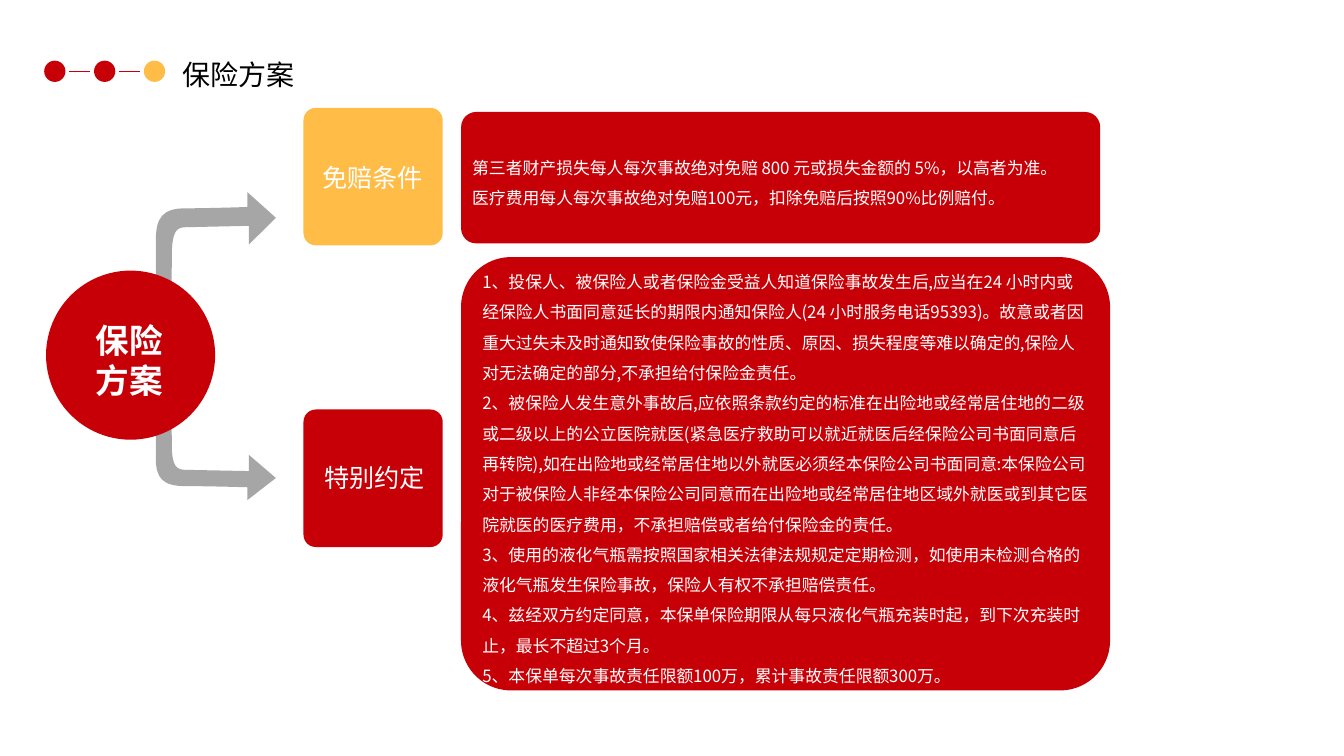
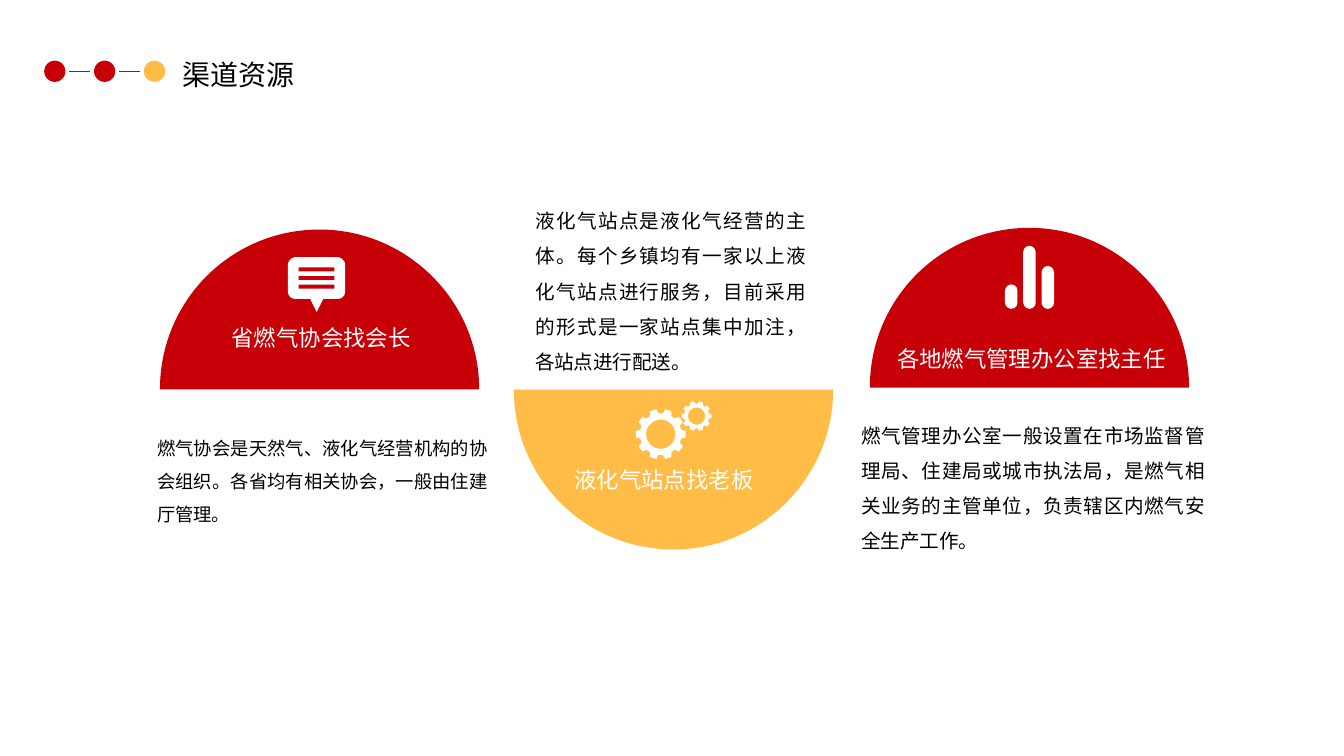
from collections import namedtuple
from math import cos, pi, sin

from lxml import etree
from pptx import Presentation
from pptx.dml.color import RGBColor
from pptx.enum.shapes import MSO_CONNECTOR, MSO_SHAPE
from pptx.enum.text import MSO_ANCHOR, MSO_AUTO_SIZE, PP_ALIGN
from pptx.oxml.ns import qn
from pptx.util import Pt

LEFT, CENTER, JUSTIFY = PP_ALIGN.LEFT, PP_ALIGN.CENTER, PP_ALIGN.JUSTIFY
TOP, MIDDLE = MSO_ANCHOR.TOP, MSO_ANCHOR.MIDDLE
FIXED, GROW = MSO_AUTO_SIZE.NONE, MSO_AUTO_SIZE.SHAPE_TO_FIT_TEXT
ELLIPSE, ROUNDED = MSO_SHAPE.OVAL, MSO_SHAPE.ROUNDED_RECTANGLE
STRAIGHT = MSO_CONNECTOR.STRAIGHT

RED, AMBER, GRAY, WHITE, BLACK = "C70008", "FFBD47", "A6A6A6", "FFFFFF", "000000"
FONT = "Noto Sans CJK SC"
Box = namedtuple("Box", "left top width height")

# Outlines: a pair is a line end, six numbers are a Bezier curve
BENT_ARROW = [[(11, 127), (12, 42), (13, 26, 17, 26, 25, 26), (69, 25), (69, 39),
               (89, 19), (68, 0), (68, 11), (68, 11, 39, 12, 22, 12),
               (5, 12, 0, 19, 0, 36), (0, 129), (2, 144, 9, 143, 11, 127)]]
HALF_DISC = [[(119, 0), (184, 0, 238, 53, 238, 119), (0, 119),
              (0, 53, 53, 0, 119, 0)]]
BUBBLE = [[(5, 0), (38, 0), (40, 0, 43, 3, 43, 5), (43, 26),
           (43, 29, 40, 31, 38, 31), (5, 31), (3, 31, 0, 29, 0, 26),
           (0, 5), (0, 3, 3, 0, 5, 0)]]
BUBBLE += [[(8, y), (8, y + 3), (35, y + 3), (35, y)] for y in (7.5, 14, 20.5)]
BUBBLE_TAIL = [[(0, 0), (11, 0), (5.5, 11)]]

EXEMPTIONS = [
    "第三者财产损失每人每次事故绝对免赔 800 元或损失金额的 5%，以高者为准。",
    "医疗费用每人每次事故绝对免赔100元，扣除免赔后按照90%比例赔付。",
]
AGREEMENTS = [
    "1、投保人、被保险人或者保险金受益人知道保险事故发生后,应当在24 小时内或经保险人书面"
    "同意延长的期限内通知保险人(24 小时服务电话95393)。故意或者因重大过失未及时通知致使"
    "保险事故的性质、原因、损失程度等难以确定的,保险人对无法确定的部分,不承担给付保险金责任。",
    "2、被保险人发生意外事故后,应依照条款约定的标准在出险地或经常居住地的二级或二级以上的"
    "公立医院就医(紧急医疗救助可以就近就医后经保险公司书面同意后再转院),如在出险地或经常"
    "居住地以外就医必须经本保险公司书面同意:本保险公司对于被保险人非经本保险公司同意而在"
    "出险地或经常居住地区域外就医或到其它医院就医的医疗费用，不承担赔偿或者给付保险金的责任。",
    "3、使用的液化气瓶需按照国家相关法律法规规定定期检测，如使用未检测合格的液化气瓶发生"
    "保险事故，保险人有权不承担赔偿责任。",
    "4、兹经双方约定同意，本保单保险期限从每只液化气瓶充装时起，到下次充装时止，"
    "最长不超过3个月。",
    "5、本保单每次事故责任限额100万，累计事故责任限额300万。",
]
ASSOCIATION = "燃气协会是天然气、液化气经营机构的协会组织。各省均有相关协会，一般由住建厅管理。"
STATION = ("液化气站点是液化气经营的主体。每个乡镇均有一家以上液化气站点进行服务，"
           "目前采用的形式是一家站点集中加注，各站点进行配送。")
OFFICE = ("燃气管理办公室一般设置在市场监督管理局、住建局或城市执法局，是燃气相关业务的"
          "主管单位，负责辖区内燃气安全生产工作。")


# Shared helpers
def color(hex_value):
    return RGBColor.from_string(hex_value)


def lengths(box):
    return [Pt(value) for value in box]


def inside(box, part):
    """Turn offsets from a box into a place on the page."""
    return part._replace(left=box.left + part.left, top=box.top + part.top)


def paint(shape, fill):
    shape.shadow.inherit = False
    shape.fill.solid()
    shape.fill.fore_color.rgb = color(fill)
    shape.line.fill.background()
    return shape


def add_preset(page, kind, box, fill, corner=None):
    shape = paint(page.shapes.add_shape(kind, *lengths(box)), fill)
    if corner is not None:
        shape.adjustments[0] = corner
    return shape


def write(shape, lines, size, hex_value, align=LEFT, bold=False, spacing=1.0, **frame_format):
    frame = shape.text_frame
    settings = {"word_wrap": True, "auto_size": FIXED, "vertical_anchor": TOP}
    for name, value in {**settings, **frame_format}.items():
        setattr(frame, name, value)
    for index, line in enumerate(lines):
        para = frame.add_paragraph() if index else frame.paragraphs[0]
        para.alignment, para.line_spacing = align, spacing
        span = para.add_run()
        span.text = line
        for name, value in {"size": Pt(size), "bold": bold, "name": FONT}.items():
            setattr(span.font, name, value)
        span.font.color.rgb = color(hex_value)
        latin = span.font._element.find(qn("a:latin"))
        latin.addnext(etree.Element(qn("a:ea"), typeface=FONT))


def add_text(page, box, lines, size, hex_value, **text_format):
    write(page.shapes.add_textbox(*lengths(box)), lines, size, hex_value, **text_format)


def bend(shape, contours):
    """Join the three line ends that stand for each curve into one Bezier."""
    ends = iter(shape._element.findall(".//" + qn("a:lnTo")))
    for contour in contours:
        for part in contour[1:]:
            first = next(ends)
            if len(part) == 2:
                continue
            curve = etree.Element(qn("a:cubicBezTo"))
            first.addprevious(curve)
            for end in (first, next(ends), next(ends)):
                curve.append(end[0])
                end.getparent().remove(end)


def add_outline(page, box, contours, grid, fill, flip=False):
    """Stretch contours drawn on a grid of the given size over the box."""
    def place(x, y):
        x, y = x / grid[0], y / grid[1]
        return (Pt(box.left + x * box.width),
                Pt(box.top + (1 - y if flip else y) * box.height))

    builder = None
    for contour in contours:
        start, *rest = [place(*part[i:i + 2]) for part in contour
                        for i in range(0, len(part), 2)]
        if builder is None:
            builder = page.shapes.build_freeform(*start, scale=1.0)
        else:
            builder.move_to(*start)
        # A closing line is left to the close mark, so ends match the parts
        builder.add_line_segments(rest, close=False)
    shape = paint(builder.convert_to_shape(), fill)
    bend(shape, contours)
    outline = shape._element.find(".//" + qn("a:path"))
    for move in outline.findall(qn("a:moveTo"))[1:]:
        move.addprevious(etree.Element(qn("a:close")))
    etree.SubElement(outline, qn("a:close"))


def add_header(page, title):
    marker = Box(23.7, 32.5, 11.4, 11.4)
    step, gap = 26.7, 1.9
    for index, fill in enumerate((RED, RED, AMBER)):
        left = marker.left + index * step
        add_preset(page, ELLIPSE, marker._replace(left=left), fill)
        if index:
            middle = Pt(marker.top + marker.height / 2)
            dash = page.shapes.add_connector(
                STRAIGHT, Pt(left - step + marker.width + gap), middle, Pt(left - gap), middle)
            dash.line.color.rgb = color(RED)
            dash.line.width = Pt(0.5)
            etree.SubElement(dash._element.spPr, qn("a:effectLst"))
    heading = page.shapes.title
    heading.left, heading.top, heading.width, heading.height = lengths(
        Box(90.7, 27.4, 130.3, 25.2))
    write(heading, [title], 15, BLACK, auto_size=GROW)


# Insurance plan
def add_hub(page, box):
    add_preset(page, ELLIPSE, box, RED)
    add_text(page, inside(box, Box(5, 22.7, 79.2, 56.2)), ["保险", "方案"], 18, WHITE,
             align=CENTER, bold=True)


def add_tile(page, box, fill, label, label_box):
    add_preset(page, ROUNDED, box, fill, 0.09)
    add_text(page, inside(box, label_box), [label], 13.5, WHITE,
             align=CENTER, vertical_anchor=MIDDLE)


def add_panel(page, box, lines):
    panel = add_preset(page, ROUNDED, box, RED, 0.115)
    write(panel, lines, 9, WHITE, spacing=1.5, vertical_anchor=MIDDLE,
          margin_left=Pt(3.6), margin_right=Pt(3.6), margin_top=Pt(2), margin_bottom=Pt(2))


def build_plan(page):
    add_header(page, "保险方案")
    add_outline(page, Box(83.5, 178.6, 64.3, 89.3), BENT_ARROW, (89, 144), GRAY, flip=True)
    add_outline(page, Box(83.5, 103, 64.3, 103.7), BENT_ARROW, (89, 144), GRAY)
    add_panel(page, Box(247, 60, 342.4, 70.4), EXEMPTIONS)
    add_panel(page, Box(247, 137.8, 347.7, 232.1), AGREEMENTS)
    add_hub(page, Box(24.7, 145, 90.6, 90.6))
    add_tile(page, Box(162.6, 57.8, 74.6, 73.7), AMBER,
             "免赔条件", Box(0, 30.1, 74.2, 14.4))
    add_tile(page, Box(162.6, 219.4, 74.6, 73.7), RED,
             "特别约定", Box(1.6, 29.6, 72.9, 13.7))


# Channel icons, each placed from the top left corner of its half disc
def add_bubble(page, disc):
    box = inside(disc, Box(68.6, 14.8, 30.6, 22.3))
    add_outline(page, inside(box, Box(11.4, 21.4, 7.9, 7.9)), BUBBLE_TAIL, (11, 11), WHITE)
    add_outline(page, box, BUBBLE, (43, 31), WHITE)


def gear_contours(teeth=10):
    """Gear of radius 1 around (1, 1), with a round hole."""
    tooth = ((0.83, -12), (1, -7.5), (1, 7.5), (0.83, 12))
    rim = []
    for index in range(teeth):
        for radius, offset in tooth:
            angle = (index * 360 / teeth + offset) * pi / 180
            rim.append((1 + radius * cos(angle), 1 + radius * sin(angle)))
    near, far, pull = 0.42, 1.58, 0.32
    hole = [(1, near),
            (1 - pull, near, near, 1 - pull, near, 1),
            (near, 1 + pull, 1 - pull, far, 1, far),
            (1 + pull, far, far, 1 + pull, far, 1),
            (far, 1 - pull, 1 + pull, near, 1, near)]
    return [rim, hole]


def add_gears(page, disc):
    for x, y, size in ((65.2, 10.3, 27), (89.9, 6.1, 16)):
        add_outline(page, inside(disc, Box(x, y, size, size)), gear_contours(), (2, 2), WHITE)


def add_bars(page, disc):
    width, step, base = 6.7, 9.8, 43.4
    for index, height in enumerate((13.1, 33.8, 23)):
        box = Box(72.4 + index * step, base - height, width, height)
        add_preset(page, ROUNDED, inside(disc, box), WHITE, 0.5)


def add_channel(page, box, fill, add_icon, label, label_box, note, note_box, size,
                flip=False, align=CENTER):
    """Half disc with icon and label; inner boxes are offsets from the disc."""
    add_outline(page, box, HALF_DISC, (238, 119), fill, flip)
    add_icon(page, box)
    add_text(page, inside(box, label_box), [label], 12, WHITE, align=align, auto_size=GROW)
    add_text(page, inside(box, note_box), [note], size, BLACK, align=JUSTIFY,
             spacing=1.5, auto_size=GROW)


def build_channels(page):
    add_header(page, "渠道资源")
    width, height = 171, 85.6
    add_channel(page, Box(85.7, 123, width, height), RED, add_bubble,
                "省燃气协会找会长", Box(-10.8, 46.9, 194.4, 21.6),
                ASSOCIATION, Box(-8.5, 102, 191, 60.5), 9.75)
    add_channel(page, Box(275.3, 208.8, width, height), AMBER, add_gears,
                "液化气站点找老板", Box(20.7, 37.4, 119.5, 21.6),
                STATION, Box(4.3, -106.6, 159.6, 103), 10.5, flip=True)
    add_channel(page, Box(466, 122.1, width, height), RED, add_bars,
                "各地燃气管理办公室找主任", Box(7.5, 59.3, 164.2, 21.6),
                OFFICE, Box(-11.7, 95, 198.4, 83.5), 10.5, align=LEFT)


def main():
    deck = Presentation()
    deck.slide_width, deck.slide_height = Pt(720), Pt(405)
    title_only = deck.slide_layouts[5]
    for build in (build_plan, build_channels):
        build(deck.slides.add_slide(title_only))
    deck.save("out.pptx")


if __name__ == "__main__":
    main()
